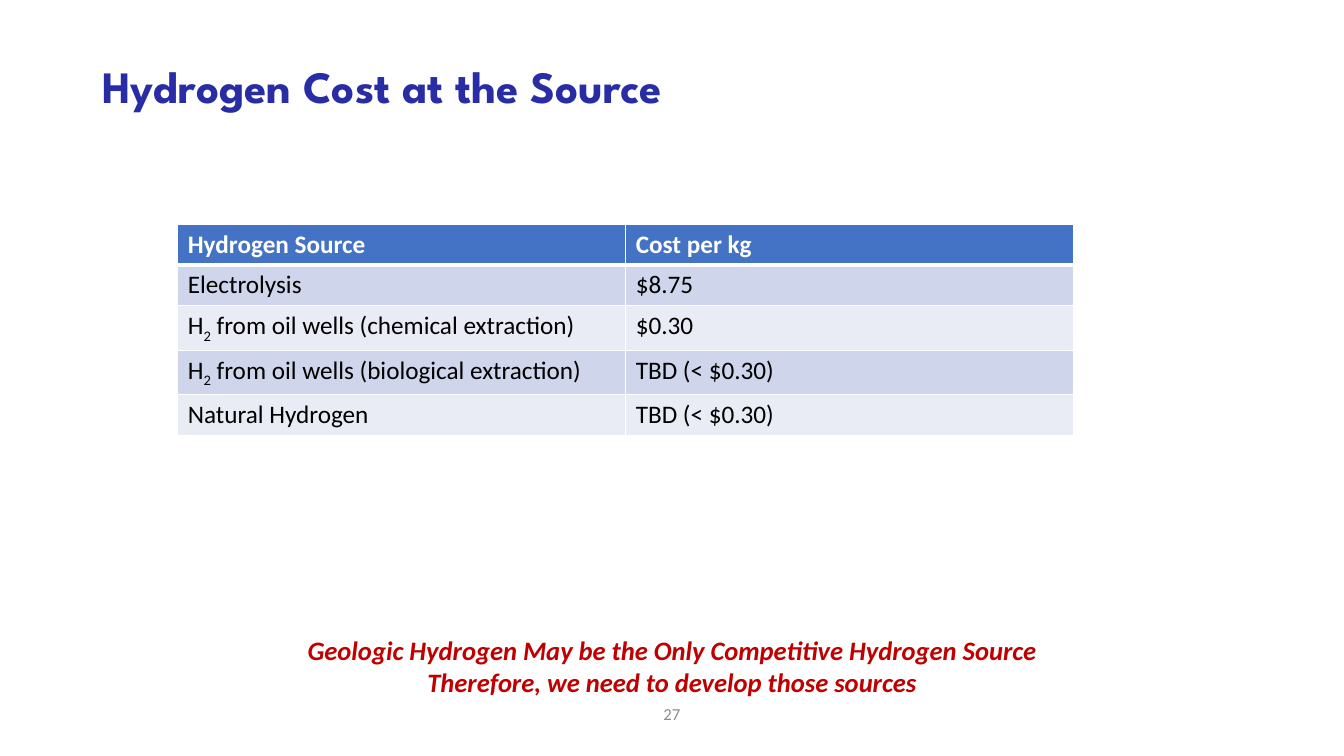
"""Build the slide comparing hydrogen cost at the source."""
from dataclasses import dataclass

import pptx
import pptx.dml.color
import pptx.enum.shapes
import pptx.enum.text
import pptx.oxml
import pptx.oxml.ns
import pptx.util

Pt = pptx.util.Pt
Align = pptx.enum.text.PP_ALIGN
Anchor = pptx.enum.text.MSO_ANCHOR


@dataclass(frozen=True)
class Theme:
    title_font: str = "League Spartan"
    body_font: str = "Calibri"
    title: str = "282DA5"
    number: str = "8C8C8C"
    header: str = "4472C4"
    bands: tuple = ("CFD5EA", "E9EBF5")
    white: str = "FFFFFF"
    black: str = "000000"
    message: str = "C00000"
    title_size: int = 32
    number_size: int = 12
    table_size: int = 18
    message_size: int = 19


theme = Theme()


def color(value):
    return pptx.dml.color.RGBColor.from_string(value)


def write_text(frame, text, size, fill, font=theme.body_font, bold=False,
               italic=False, align=Align.LEFT, anchor=Anchor.MIDDLE, spacing=1.0):
    """Write lines of text; parts between underscores become subscripts."""
    frame.word_wrap = True
    frame.vertical_anchor = anchor
    for index, line in enumerate(text.split("\n")):
        paragraph = frame.paragraphs[0] if index == 0 else frame.add_paragraph()
        paragraph.alignment = align
        paragraph.line_spacing = spacing
        for position, part in enumerate(line.split("_")):
            run = paragraph.add_run()
            run.text = part
            run.font.name = font
            run.font.size = Pt(size)
            run.font.bold = bold
            run.font.italic = italic
            run.font.color.rgb = color(fill)
            if position % 2:
                run.font._element.set("baseline", "-25000")


presentation = pptx.Presentation()
presentation.slide_width = Pt(960)
presentation.slide_height = Pt(540)
slide = presentation.slides.add_slide(presentation.slide_layouts[6])

title = slide.shapes.add_textbox(Pt(66), Pt(28.75), Pt(828), Pt(70))
write_text(title.text_frame, "Hydrogen Cost at the Source", theme.title_size,
           theme.title, font=theme.title_font, bold=True, spacing=0.9)

page_number = slide.shapes.add_textbox(Pt(372), Pt(495.5), Pt(216), Pt(28.75))
write_text(page_number.text_frame, "27", theme.number_size, theme.number,
           align=Align.CENTER)

costs = [
    ("Hydrogen Source", "Cost per kg"),
    ("Electrolysis", "$8.75"),
    ("H_2_ from oil wells (chemical extraction)", "$0.30"),
    ("H_2_ from oil wells (biological extraction)", "TBD (< $0.30)"),
    ("Natural Hydrogen", "TBD (< $0.30)"),
]
row_height = 29.2
column_width = 320
table = slide.shapes.add_table(len(costs), 2, Pt(127), Pt(160), Pt(2 * column_width),
                               Pt(len(costs) * row_height)).table
for column in table.columns:
    column.width = Pt(column_width)
for row_index, values in enumerate(costs):
    table.rows[row_index].height = Pt(row_height)
    is_header = row_index == 0
    for column_index, value in enumerate(values):
        cell = table.cell(row_index, column_index)
        write_text(cell.text_frame, value, theme.table_size,
                   theme.white if is_header else theme.black, bold=is_header,
                   anchor=Anchor.TOP)
        properties = cell._tc.get_or_add_tcPr()
        for side in "LRTB":
            thick = (is_header and side == "B") or (row_index == 1 and side == "T")
            properties.append(pptx.oxml.parse_xml(
                f'<a:ln{side} {pptx.oxml.ns.nsdecls("a")} w="{Pt(3 if thick else 1)}">'
                f'<a:solidFill><a:srgbClr val="{theme.white}"/></a:solidFill></a:ln{side}>'))
        cell.fill.solid()
        cell.fill.fore_color.rgb = color(
            theme.header if is_header else theme.bands[(row_index - 1) % 2])

message = slide.shapes.add_shape(pptx.enum.shapes.MSO_SHAPE.RECTANGLE,
                                 Pt(184.5), Pt(449.5), Pt(591), Pt(53.25))
message.shadow.inherit = False
message.fill.solid()
message.fill.fore_color.rgb = color(theme.white)
message.line.fill.background()
write_text(message.text_frame,
           "Geologic Hydrogen May be the Only Competitive Hydrogen Source\n"
           "Therefore, we need to develop those sources",
           theme.message_size, theme.message, bold=True, italic=True,
           align=Align.CENTER, anchor=Anchor.TOP)

presentation.save("out.pptx")
